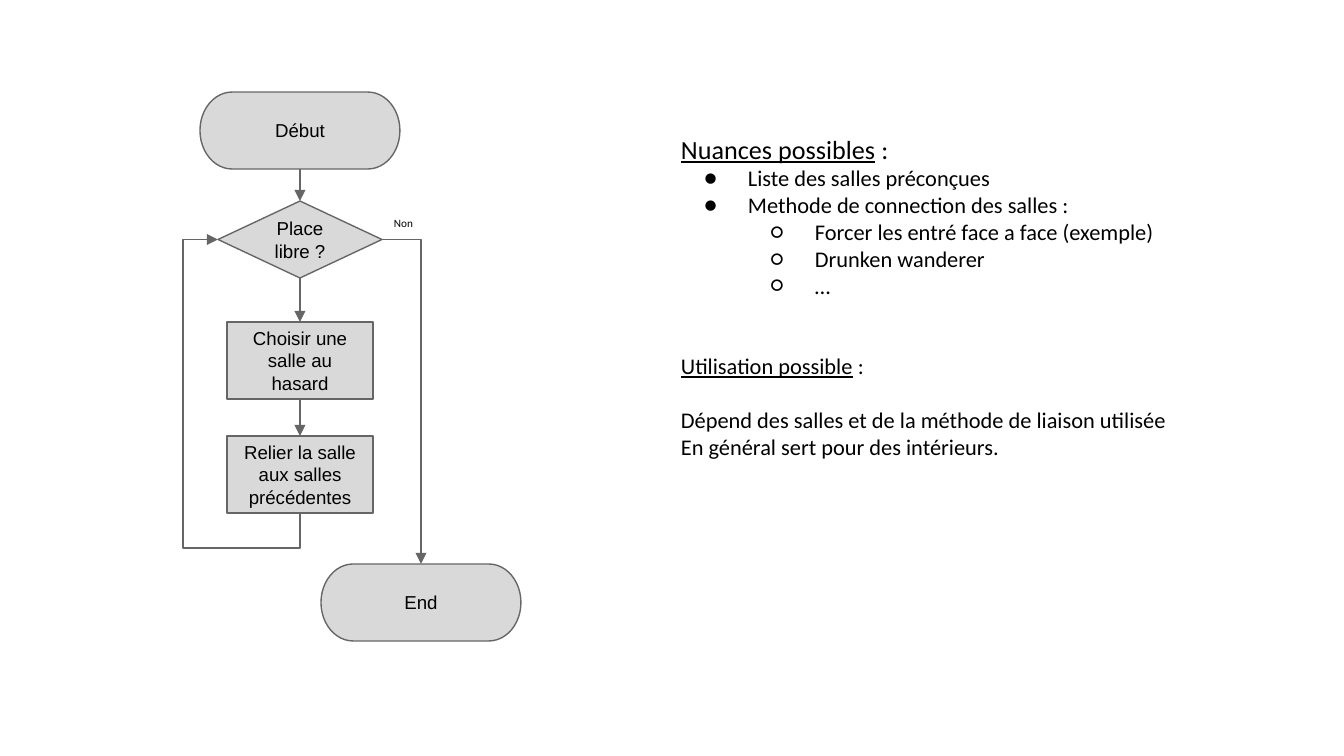
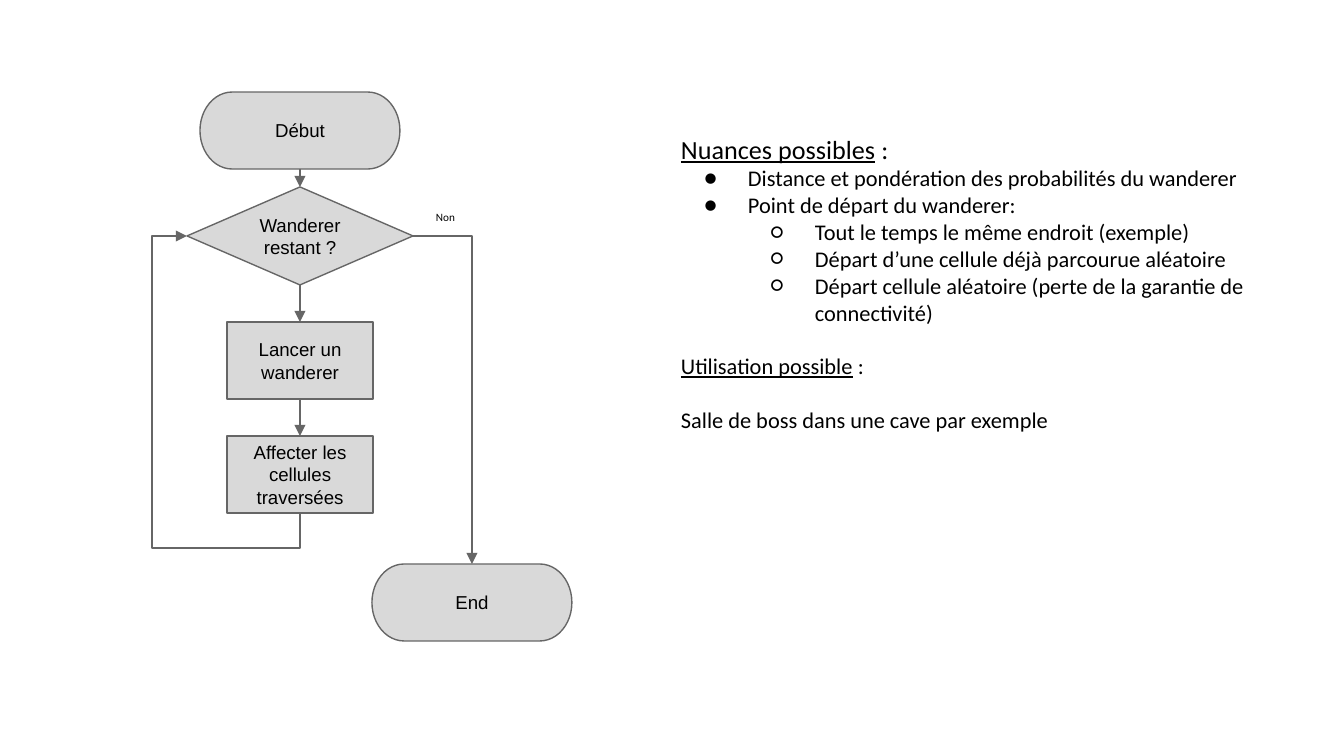
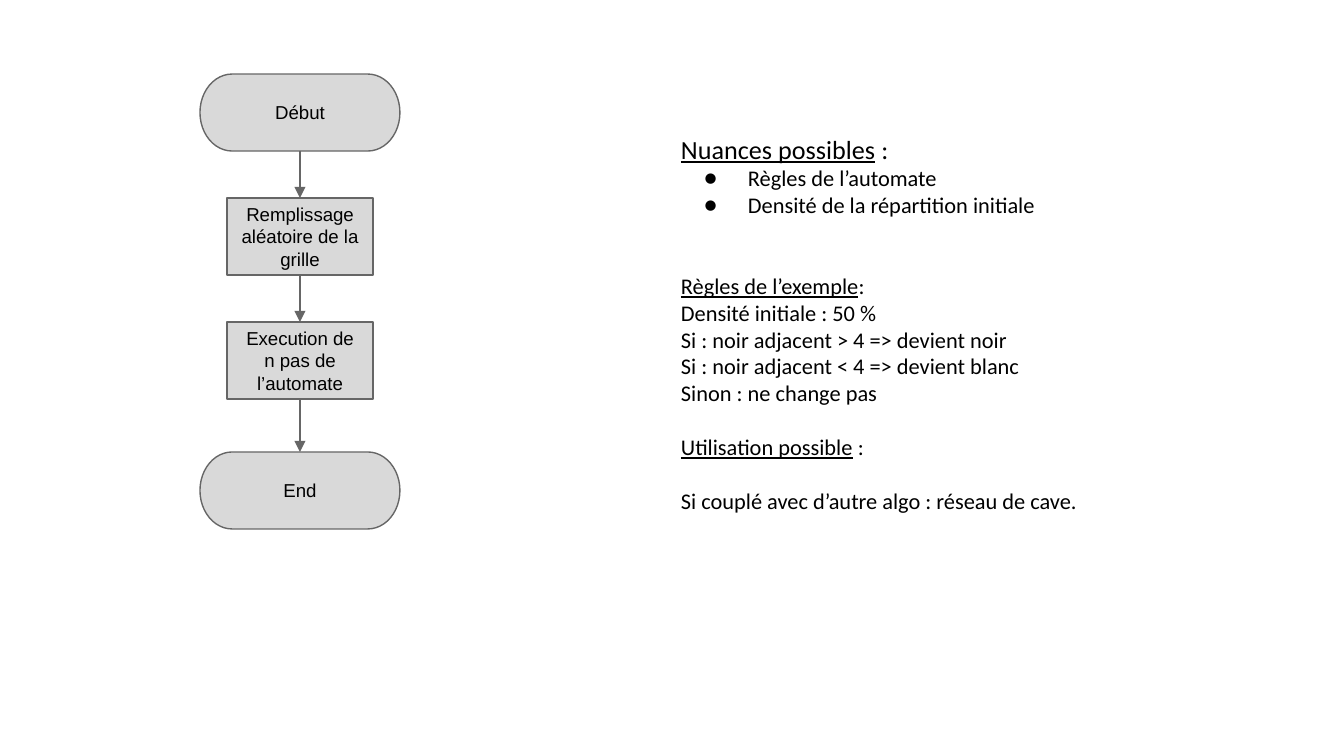
"""Build three slides that pair a flowchart with remarks on its algorithm."""
from dataclasses import dataclass
from typing import Optional

import lxml.etree
import pptx
import pptx.dml.color
import pptx.enum.shapes
import pptx.enum.text
import pptx.oxml.ns
import pptx.util

SHAPE = pptx.enum.shapes.MSO_SHAPE
CONNECTOR = pptx.enum.shapes.MSO_CONNECTOR
SLIDE_W, SLIDE_H = 1344, 756
EMU_PER_PX = 9144000 / SLIDE_W
TOP, LEFT, BOTTOM, RIGHT = range(4)
AXIS = 300
NODE_H = 77
STUB = 35
INSET = 13
INDENT, HANGING = 67, 44
BULLETS = "●○"


@dataclass(frozen=True)
class Theme:
    fill: str = "D9D9D9"
    line: str = "666666"
    text: str = "000000"
    node_font: str = "Arial"
    body_font: str = "Calibri"
    line_width: float = 0.75
    node_size: int = 10
    label_size: int = 6
    title_size: int = 14
    body_size: int = 12
    body_pitch: float = 14.4


THEME = Theme()


@dataclass(frozen=True)
class Node:
    shape: SHAPE
    text: str
    top: int
    width: int
    height: int = NODE_H
    center: int = AXIS


@dataclass(frozen=True)
class Remark:
    text: str
    heading: str = ""
    level: int = 0
    gap: int = 0
    size: int = THEME.body_size


@dataclass(frozen=True)
class Exit:
    end: Node
    label_left: int
    label_top: int


@dataclass(frozen=True)
class FlowSlide:
    chain: tuple[Node, ...]
    remarks: tuple[Remark, ...]
    text_height: int
    exit: Optional[Exit] = None


def terminator(text: str, top: int, center: int = AXIS) -> Node:
    return Node(SHAPE.FLOWCHART_TERMINATOR, text, top, 200, center=center)


def step(text: str, top: int) -> Node:
    return Node(SHAPE.RECTANGLE, text, top, 146)


def decision(text: str, top: int, width: int, height: int = NODE_H) -> Node:
    return Node(SHAPE.DIAMOND, text, top, width, height)


NUANCES = Remark(" :", "Nuances possibles", size=THEME.title_size)

SLIDES = (
    FlowSlide(
        chain=(
            terminator("Début", 92),
            decision("Place libre ?", 201, 164),
            step("Choisir une salle au hasard", 322),
            step("Relier la salle aux salles précédentes", 436),
        ),
        exit=Exit(terminator("End", 564, 421), 381, 210),
        text_height=357,
        remarks=(
            NUANCES,
            Remark("Liste des salles préconçues", level=1),
            Remark("Methode de connection des salles :", level=1),
            Remark("Forcer les entré face a face (exemple)", level=2),
            Remark("Drunken wanderer", level=2),
            Remark("…", level=2),
            Remark(" :", "Utilisation possible", gap=2),
            Remark("Dépend des salles et de la méthode de liaison utilisée", gap=1),
            Remark("En général sert pour des intérieurs."),
        ),
    ),
    FlowSlide(
        chain=(
            terminator("Début", 92),
            decision("Wanderer restant ?", 187, 226, 98),
            step("Lancer un wanderer", 322),
            step("Affecter les cellules traversées", 436),
        ),
        exit=Exit(terminator("End", 564, 472), 423, 204),
        text_height=331,
        remarks=(
            NUANCES,
            Remark("Distance et pondération des probabilités du wanderer", level=1),
            Remark("Point de départ du wanderer:", level=1),
            Remark("Tout le temps le même endroit (exemple)", level=2),
            Remark("Départ d’une cellule déjà parcourue aléatoire", level=2),
            Remark("Départ cellule aléatoire (perte de la garantie de connectivité)", level=2),
            Remark(" :", "Utilisation possible", gap=1),
            Remark("Salle de boss dans une cave par exemple", gap=1),
        ),
    ),
    FlowSlide(
        chain=(
            terminator("Début", 74),
            step("Remplissage aléatoire de la grille", 198),
            step("Execution de n pas de l’automate", 322),
            terminator("End", 452),
        ),
        text_height=411,
        remarks=(
            NUANCES,
            Remark("Règles de l’automate", level=1),
            Remark("Densité de la répartition initiale", level=1),
            Remark(":", "Règles de l’exemple", gap=2),
            Remark("Densité initiale : 50 %"),
            Remark("Si : noir adjacent > 4 => devient noir"),
            Remark("Si : noir adjacent < 4 => devient blanc"),
            Remark("Sinon : ne change pas"),
            Remark(" :", "Utilisation possible", gap=1),
            Remark("Si couplé avec d’autre algo : réseau de cave.", gap=1),
        ),
    ),
)


def px(n: float) -> pptx.util.Emu:
    return pptx.util.Emu(round(n * EMU_PER_PX))


def rgb(value: str) -> pptx.dml.color.RGBColor:
    return pptx.dml.color.RGBColor.from_string(value)


def add_xml(parent, tag: str, **attrs: str):
    return lxml.etree.SubElement(parent, pptx.oxml.ns.qn(tag), **attrs)


def set_font(p, name: str, size: int) -> None:
    p.font.name = name
    p.font.size = pptx.util.Pt(size)
    p.font.color.rgb = rgb(THEME.text)


def set_frame(tf) -> None:
    tf.word_wrap = True
    tf.margin_left = tf.margin_right = tf.margin_top = tf.margin_bottom = px(INSET)


def set_line(line) -> None:
    line.color.rgb = rgb(THEME.line)
    line.width = pptx.util.Pt(THEME.line_width)


def add_node(slide, node: Node):
    sp = slide.shapes.add_shape(
        node.shape, px(node.center - node.width / 2), px(node.top),
        px(node.width), px(node.height))
    sp.shadow.inherit = False
    sp.fill.solid()
    sp.fill.fore_color.rgb = rgb(THEME.fill)
    set_line(sp.line)
    tf = sp.text_frame
    set_frame(tf)
    tf.vertical_anchor = pptx.enum.text.MSO_ANCHOR.MIDDLE
    p = tf.paragraphs[0]
    p.text = node.text
    p.alignment = pptx.enum.text.PP_ALIGN.CENTER
    set_font(p, THEME.node_font, THEME.node_size)
    return sp


def add_arrow(slide, start, start_side: int, end, end_side: int,
              kind: CONNECTOR = CONNECTOR.STRAIGHT):
    c = slide.shapes.add_connector(kind, 0, 0, 0, 0)
    c.begin_connect(start, start_side)
    c.end_connect(end, end_side)
    set_line(c.line)
    sp_pr = c._element.spPr
    add_xml(sp_pr.find(pptx.oxml.ns.qn("a:ln")), "a:tailEnd", type="triangle")
    add_xml(sp_pr, "a:effectLst")
    return c


def add_exit_arrow(slide, test, end) -> None:
    c = add_arrow(slide, test, RIGHT, end, TOP, CONNECTOR.ELBOW)
    c._element.xpath("p:spPr/a:prstGeom")[0].set("prst", "bentConnector2")


def add_loop_arrow(slide, last, test) -> None:
    c = add_arrow(slide, last, BOTTOM, test, LEFT, CONNECTOR.ELBOW)
    rise, run = c.begin_y - c.end_y, c.begin_x - c.end_x
    mid_x, mid_y = (c.begin_x + c.end_x) // 2, (c.begin_y + c.end_y) // 2
    c.left, c.top = mid_x - rise // 2, mid_y - run // 2
    c.width, c.height = rise, run
    xfrm = c._element.xpath("p:spPr/a:xfrm")[0]
    for name, value in (("rot", "5400000"), ("flipH", "1"), ("flipV", "0")):
        xfrm.set(name, value)
    geom = c._element.xpath("p:spPr/a:prstGeom")[0]
    geom.set("prst", "bentConnector4")
    guides = geom.find(pptx.oxml.ns.qn("a:avLst"))
    stub = px(STUB)
    for name, ratio in (("adj1", -stub / rise), ("adj2", 1 + stub / run)):
        add_xml(guides, "a:gd", name=name, fmla=f"val {round(ratio * 100000)}")


def set_bullet(p, level: int) -> None:
    p.level = level - 1
    p_pr = p._p.get_or_add_pPr()
    p_pr.set("marL", str(px(INDENT * level)))
    p_pr.set("indent", str(px(-HANGING)))
    add_xml(add_xml(p_pr, "a:buClr"), "a:srgbClr", val=THEME.text)
    add_xml(p_pr, "a:buFont", typeface=THEME.body_font)
    add_xml(p_pr, "a:buChar", char=BULLETS[level - 1])


def add_text_box(slide, left: int, top: int, width: int, height: int,
                 remarks: tuple[Remark, ...]) -> None:
    tf = slide.shapes.add_textbox(px(left), px(top), px(width), px(height)).text_frame
    set_frame(tf)
    tf.auto_size = pptx.enum.text.MSO_AUTO_SIZE.SHAPE_TO_FIT_TEXT
    for i, remark in enumerate(remarks):
        p = tf.add_paragraph() if i else tf.paragraphs[0]
        if remark.level:
            set_bullet(p, remark.level)
        if remark.gap:
            p.space_before = pptx.util.Pt(remark.gap * THEME.body_pitch)
        if remark.heading:
            r = p.add_run()
            r.text = remark.heading
            r.font.underline = True
        p.add_run().text = remark.text
        set_font(p, THEME.body_font, remark.size)


def build_slide(prs, flow: FlowSlide) -> None:
    slide = prs.slides.add_slide(prs.slide_layouts[6])
    chain = [add_node(slide, node) for node in flow.chain]
    for upper, lower in zip(chain, chain[1:]):
        add_arrow(slide, upper, BOTTOM, lower, TOP)
    if flow.exit:
        test = chain[1]
        add_exit_arrow(slide, test, add_node(slide, flow.exit.end))
        add_loop_arrow(slide, chain[-1], test)
        add_text_box(slide, flow.exit.label_left, flow.exit.label_top, 98, 40,
                     (Remark("Non", size=THEME.label_size),))
    add_text_box(slide, 668, 120, 605, flow.text_height, flow.remarks)


def main() -> None:
    prs = pptx.Presentation()
    prs.slide_width, prs.slide_height = px(SLIDE_W), px(SLIDE_H)
    for flow in SLIDES:
        build_slide(prs, flow)
    prs.save("out.pptx")


if __name__ == "__main__":
    main()
